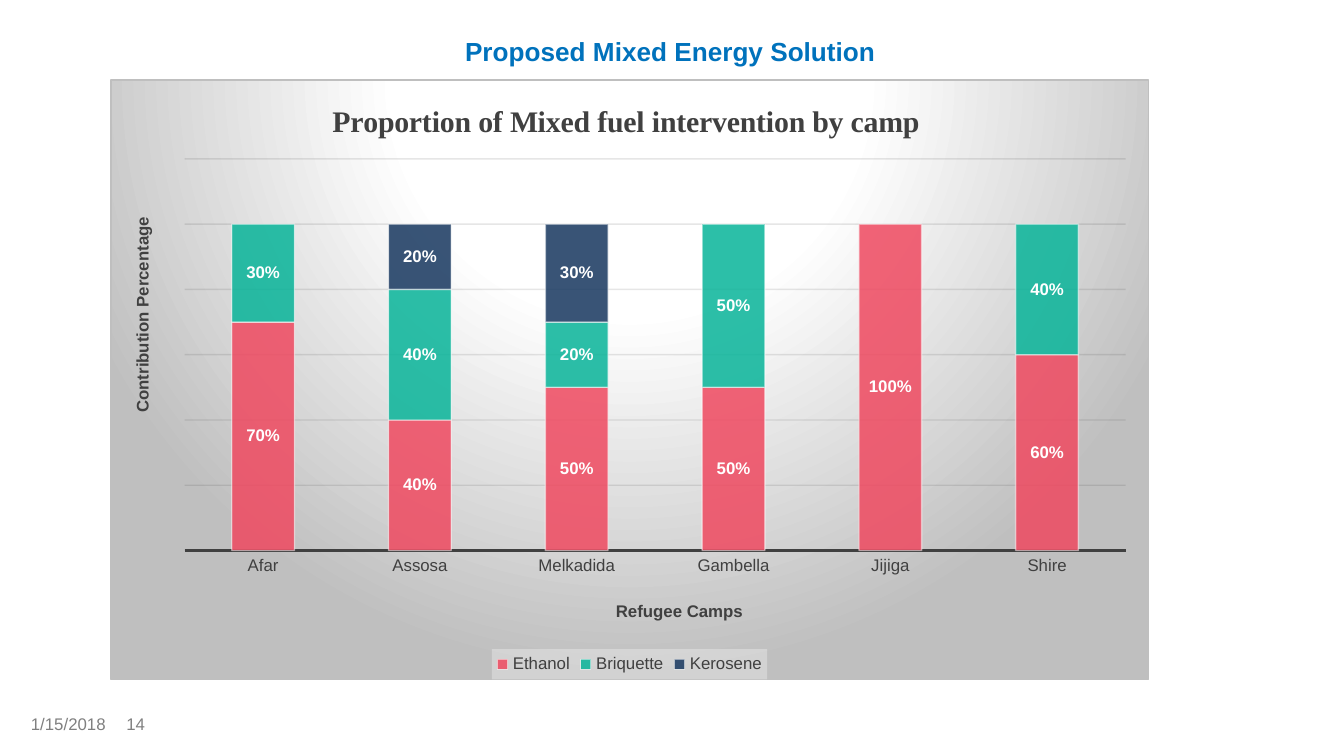
from dataclasses import dataclass
from typing import NamedTuple, Optional

from lxml import etree
from pptx import Presentation
from pptx.chart.axis import CategoryAxis
from pptx.chart.data import CategoryChartData
from pptx.dml.color import RGBColor
from pptx.enum.chart import XL_CHART_TYPE as ChartType
from pptx.enum.chart import XL_LABEL_POSITION as LabelPosition
from pptx.enum.chart import XL_LEGEND_POSITION as LegendPosition
from pptx.enum.chart import XL_TICK_LABEL_POSITION as TickLabels
from pptx.enum.chart import XL_TICK_MARK as TickMark
from pptx.enum.text import MSO_ANCHOR as Anchor
from pptx.enum.text import PP_ALIGN as Align
from pptx.oxml import parse_xml
from pptx.oxml.ns import nsdecls, qn
from pptx.util import Inches, Pt


@dataclass(frozen=True)
class Theme:
    heading: str = "0072BC"
    footer: str = "808080"
    ink: str = "404040"
    grid: str = "0D0D0D"
    white: str = "FFFFFF"
    panel_edge: str = "BFBFBF"
    legend_fill: str = "F2F2F2"
    font: str = "Arial"
    chart_font: str = "Times New Roman"
    heading_size: float = 14
    chart_title_size: float = 16
    chart_size: float = 10
    small_size: float = 9


class Fuel(NamedTuple):
    name: str
    color: str
    shares: tuple[Optional[float], ...]


class Footer(NamedTuple):
    text: str
    left: float
    width: float


THEME = Theme()
PANEL_WIDTH, PANEL_HEIGHT = 7.73, 4.47
CAMPS = ("Afar", "Assosa", "Melkadida", "Gambella", "Jijiga", "Shire")
FUELS = (
    Fuel("Ethanol", "EF4960", (0.7, 0.4, 0.5, 0.5, 1, 0.6)),
    Fuel("Briquette", "08B499", (0.3, 0.4, 0.2, 0.5, None, 0.4)),
    Fuel("Kerosene", "17375F", (None, 0.2, 0.3, None, None, None)),
)
FOOTERS = (Footer("1/15/2018", 0.23, 0.71), Footer("14", 0.94, 0.5))


def style_font(font, size: float, color: str, bold: bool = False, name: str = THEME.font) -> None:
    font.name = name
    font.size = Pt(size)
    font.bold = bold
    font.color.rgb = RGBColor.from_string(color)


def clear_margins(frame) -> None:
    frame.margin_left = frame.margin_right = frame.margin_top = frame.margin_bottom = 0


def style_line(line, color: str, width: float) -> None:
    line.color.rgb = RGBColor.from_string(color)
    line.width = Pt(width)


def fade(owner, fill_tag: str, percent: int) -> None:
    properties = next(owner.iter(qn("c:spPr")))
    color = properties.find(fill_tag)[0]
    etree.SubElement(color, qn("a:alpha"), val=str(percent * 1000))


def place(element, index: int, **inches: float) -> None:
    for layout in element.findall(qn("c:layout")):
        element.remove(layout)
    modes = '<c:xMode val="edge"/><c:yMode val="edge"/>'
    if "w" in inches:
        modes = '<c:layoutTarget val="inner"/>' + modes
    values = "".join(
        f'<c:{key} val="{length / (PANEL_WIDTH if key in "xw" else PANEL_HEIGHT)}"/>'
        for key, length in inches.items())
    element.insert(index, parse_xml(
        f'<c:layout {nsdecls("c")}><c:manualLayout>{modes}{values}</c:manualLayout></c:layout>'))


def add_heading(slide) -> None:
    heading = slide.shapes.title
    heading.left, heading.top = Inches(0.23), Inches(0)
    heading.width, heading.height = Inches(9.57), Inches(0.5)
    frame = heading.text_frame
    clear_margins(frame)
    frame.vertical_anchor = Anchor.BOTTOM
    frame.text = "Proposed Mixed Energy Solution "
    paragraph = frame.paragraphs[0]
    paragraph.alignment = Align.CENTER
    paragraph.line_spacing = 0.9
    style_font(paragraph.runs[0].font, THEME.heading_size, THEME.heading, True)


def add_footer(slide, footer: Footer) -> None:
    box = slide.shapes.add_textbox(
        Inches(footer.left), Inches(5.31), Inches(footer.width), Inches(0.17))
    frame = box.text_frame
    clear_margins(frame)
    frame.word_wrap = True
    frame.text = footer.text
    style_font(frame.paragraphs[0].runs[0].font, THEME.small_size, THEME.footer)


def style_panel(chart) -> None:
    stops = "".join(
        f'<a:gs pos="{position * 1000}"><a:srgbClr val="{color}"/></a:gs>'
        for position, color in ((0, THEME.white), (39, THEME.white), (100, THEME.panel_edge)))
    panel = parse_xml(
        f'<c:spPr {nsdecls("c", "a")}><a:gradFill><a:gsLst>{stops}</a:gsLst>'
        '<a:path path="circle"><a:fillToRect l="50000" t="-80000" r="50000" b="180000"/></a:path>'
        f'</a:gradFill><a:ln w="{Pt(0.75)}"><a:solidFill><a:srgbClr val="{THEME.panel_edge}"/>'
        '</a:solidFill></a:ln></c:spPr>')
    chart.element.find(qn("c:chart")).addnext(panel)


def style_series(series, fuel: Fuel) -> None:
    series.format.fill.solid()
    series.format.fill.fore_color.rgb = RGBColor.from_string(fuel.color)
    style_line(series.format.line, THEME.white, 0.75)
    fade(series._element, qn("a:solidFill"), 85)
    fade(series._element, f'{qn("a:ln")}/{qn("a:solidFill")}', 50)
    labels = series.data_labels
    labels.show_value = True
    labels.position = LabelPosition.CENTER
    labels.number_format = "0%"
    labels.number_format_is_linked = False
    style_font(labels.font, THEME.small_size, THEME.white, True)


def add_title(owner, text: str, size: float, font: str, x: float, y: float):
    title = owner.chart_title if hasattr(owner, "chart_title") else owner.axis_title
    title.text_frame.text = text
    style_font(title.text_frame.paragraphs[0].runs[0].font, size, THEME.ink, True, font)
    place(title._element, 1, x=x, y=y)
    return title


def style_axes(camp_axis: CategoryAxis, share_axis) -> None:
    camp_axis.major_tick_mark = TickMark.NONE
    camp_axis.tick_label_position = TickLabels.NEXT_TO_AXIS
    style_font(camp_axis.tick_labels.font, THEME.small_size, THEME.ink)
    style_line(camp_axis.format.line, THEME.ink, 1.5)
    add_title(camp_axis, "Refugee Camps", THEME.small_size, THEME.font, 3.74, 3.86)

    share_axis.minimum_scale, share_axis.maximum_scale = 0, 1.2
    share_axis.major_unit = 0.2
    share_axis.tick_labels.number_format = "0%"
    share_axis.tick_labels.number_format_is_linked = False
    share_axis.has_major_gridlines = True
    style_line(share_axis.major_gridlines.format.line, THEME.grid, 0.75)
    fade(share_axis._element.find(qn("c:majorGridlines")),
         f'{qn("a:ln")}/{qn("a:solidFill")}', 10)
    title = add_title(
        share_axis, "Contribution Percentage", THEME.small_size, THEME.font, 0.13, 1)
    body = next(title._element.iter(qn("a:bodyPr")))
    body.set("rot", "-5400000")
    body.set("vert", "horz")
    share_axis.visible = False


def style_legend(chart) -> None:
    chart.has_legend = True
    legend = chart.legend
    legend.position = LegendPosition.BOTTOM
    legend.include_in_layout = False
    style_font(legend.font, THEME.small_size, THEME.ink)
    legend._element.find(qn("c:overlay")).addnext(parse_xml(
        f'<c:spPr {nsdecls("c", "a")}><a:solidFill><a:srgbClr val="{THEME.legend_fill}">'
        '<a:alpha val="39000"/></a:srgbClr></a:solidFill></c:spPr>'))


def add_fuel_chart(slide) -> None:
    fuel_data = CategoryChartData(number_format="0%")
    fuel_data.categories = CAMPS
    for fuel in FUELS:
        fuel_data.add_series(fuel.name, fuel.shares)
    chart = slide.shapes.add_chart(
        ChartType.COLUMN_STACKED, Inches(0.82), Inches(0.59),
        Inches(PANEL_WIDTH), Inches(PANEL_HEIGHT), fuel_data).chart
    style_font(chart.font, THEME.chart_size, "000000")
    style_panel(chart)
    chart.has_title = True
    add_title(chart, "Proportion of Mixed fuel intervention by camp",
              THEME.chart_title_size, THEME.chart_font, 1.61, 0.13)
    plot = chart.plots[0]
    plot.gap_width, plot.overlap = 150, 100
    plot.vary_by_categories = False
    for series, fuel in zip(plot.series, FUELS):
        style_series(series, fuel)
    style_axes(chart.category_axis, chart.value_axis)
    style_legend(chart)
    plot_area = next(chart.element.iter(qn("c:plotArea")))
    place(plot_area, 0, x=0.55, y=0.59, w=7.01, h=2.92)


def main() -> None:
    deck = Presentation()
    deck.slide_width = Inches(10)
    deck.slide_height = deck.slide_width * 9 // 16
    slide = deck.slides.add_slide(deck.slide_layouts[5])
    add_heading(slide)
    for footer in FOOTERS:
        add_footer(slide, footer)
    add_fuel_chart(slide)
    deck.save("out.pptx")


if __name__ == "__main__":
    main()
